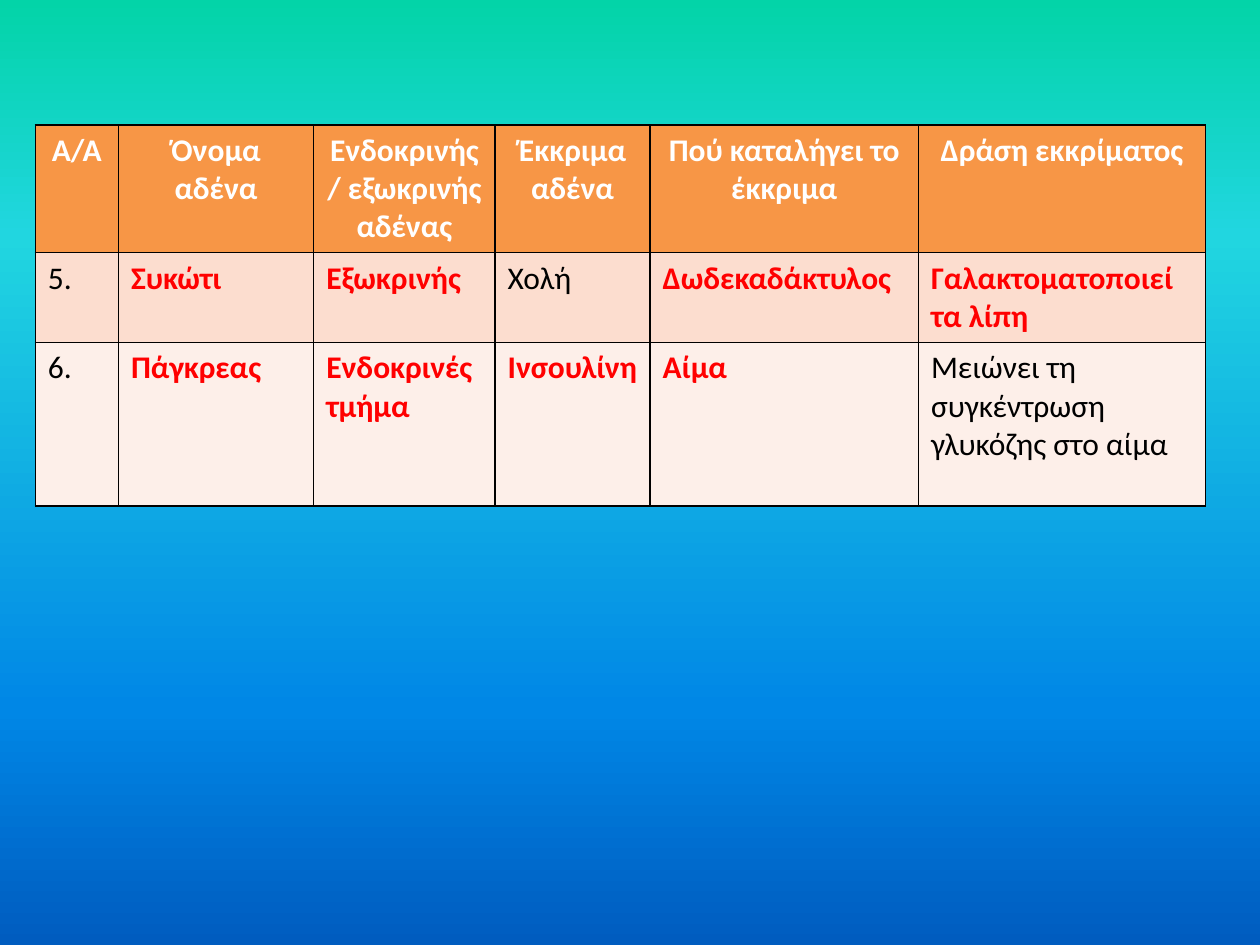
from dataclasses import dataclass

from copy import deepcopy
from pptx import Presentation
from pptx.dml.color import RGBColor as Color
from pptx.enum.text import PP_ALIGN as Align
from pptx.oxml import parse_xml
from pptx.oxml.ns import nsdecls, qn
from pptx.util import Inches, Pt


@dataclass(frozen=True)
class Theme:
    font: str = "Calibri"
    size: int = 18
    header_text: str = "FFFFFF"
    plain_text: str = "000000"
    answer_text: str = "FF0000"
    row_fills: tuple = ("F79646", "FCDDCF", "FDEFE9")
    border: str = "000000"
    border_width: int = 1
    background: tuple = ((0, "03D4A8"), (0.25, "21D6E0"), (0.75, "0087E6"), (1, "005CBF"))


def add_borders(cell):
    properties = cell._tc.get_or_add_tcPr()
    for side in "LRTB":
        properties.append(parse_xml(
            f'<a:ln{side} {nsdecls("a")} w="{Pt(theme.border_width)}"><a:solidFill>'
            f'<a:srgbClr val="{theme.border}"/></a:solidFill></a:ln{side}>'))


theme = Theme()
presentation = Presentation()
presentation.slide_width, presentation.slide_height = Inches(10), Inches(7.5)
slide_width, slide_height = presentation.slide_width, presentation.slide_height
slide = presentation.slides.add_slide(presentation.slide_layouts[6])

background = slide.background.fill
background.gradient()
background.gradient_angle = 270
stop_list = slide.element.find(".//" + qn("a:gsLst"))
for stop_element in list(stop_list):
    stop_list.append(deepcopy(stop_element))
for stop, (position, color) in zip(background.gradient_stops, theme.background):
    stop.position = position
    stop.color.rgb = Color.from_string(color)

rows = [
    ["Α/Α", "Όνομα αδένα", "Ενδοκρινής/ εξωκρινής\nαδένας", "Έκκριμα αδένα",
     "Πού καταλήγει το έκκριμα", "Δράση εκκρίματος"],
    ["5.", "Συκώτι", "Εξωκρινής ", "Χολή", "Δωδεκαδάκτυλος", "Γαλακτοματοποιεί τα λίπη"],
    ["6.", "Πάγκρεας", "Ενδοκρινές τμήμα ", "Ινσουλίνη", "Αίμα",
     "Μειώνει τη συγκέντρωση γλυκόζης στο αίμα "],
]
given_cells = {(1, 0), (1, 3), (2, 0), (2, 5)}
column_percents = [6.6, 15.5, 14.4, 12.3, 21.3, 22.8]
row_parts = [10, 7, 13]
table_width = int(slide_width * sum(column_percents) / 100)
table_height = int(slide_height * 0.4)

table = slide.shapes.add_table(
    len(rows), len(column_percents), int(slide_width * 0.028), int(slide_height * 0.132),
    table_width, table_height).table
for column, percent in zip(table.columns, column_percents):
    column.width = int(slide_width * percent / 100)
for row, part in zip(table.rows, row_parts):
    row.height = int(table_height * part / sum(row_parts))

for row_index, texts in enumerate(rows):
    for column_index, text in enumerate(texts):
        is_header = row_index == 0
        is_given = (row_index, column_index) in given_cells
        text_color = (theme.header_text if is_header
                      else theme.plain_text if is_given else theme.answer_text)
        cell = table.cell(row_index, column_index)
        add_borders(cell)
        cell.fill.solid()
        cell.fill.fore_color.rgb = Color.from_string(theme.row_fills[row_index])
        cell.text = text
        for paragraph in cell.text_frame.paragraphs:
            paragraph.alignment = Align.CENTER if is_header else Align.LEFT
            paragraph.font.name = theme.font
            paragraph.font.size = Pt(theme.size)
            paragraph.font.bold = not is_given
            paragraph.font.color.rgb = Color.from_string(text_color)

presentation.save("out.pptx")
